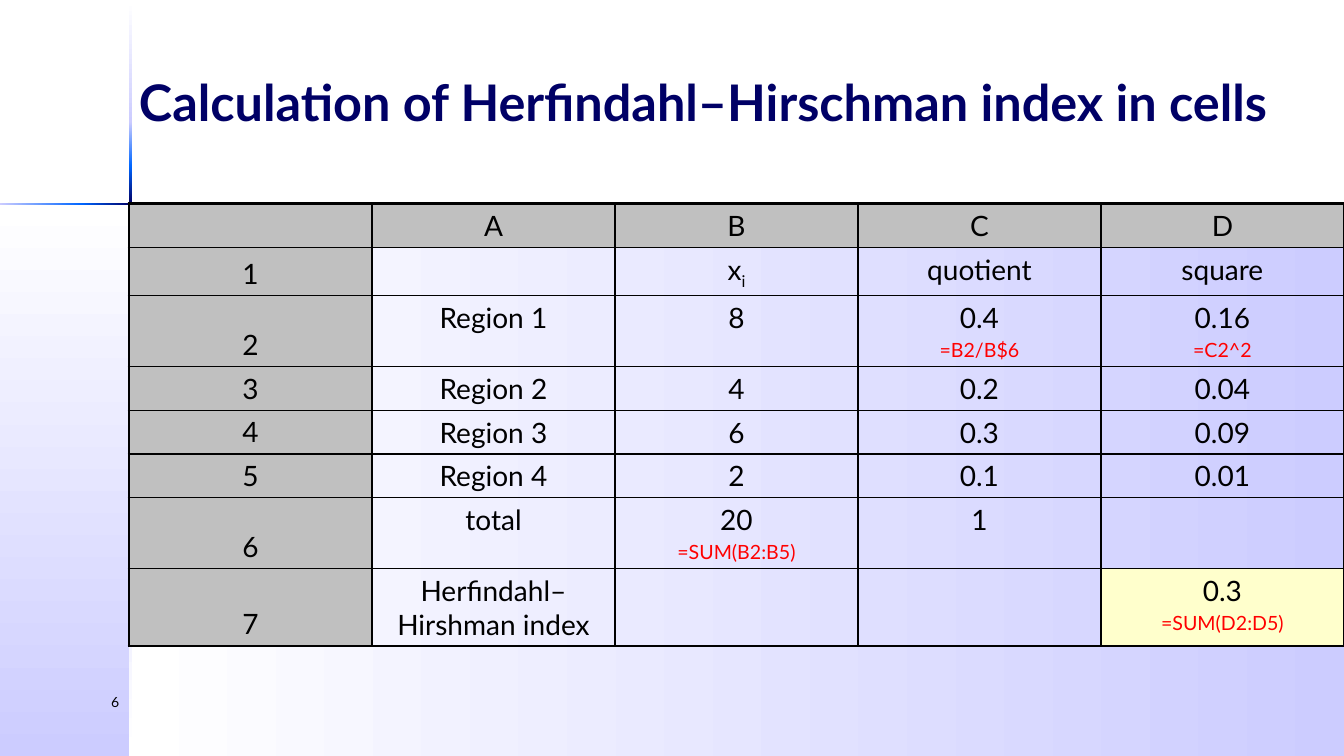
import copy

import pptx
import pptx.dml.color
import pptx.enum.shapes
import pptx.enum.text
import pptx.oxml
import pptx.oxml.ns
import pptx.util

Inches = pptx.util.Inches
Pt = pptx.util.Pt
ALIGN = pptx.enum.text.PP_ALIGN
ANCHOR = pptx.enum.text.MSO_ANCHOR


class Theme:
    font = "Lato"
    black, navy, blue = "000000", "000066", "0066FF"
    lavender, white = "CCCCFF", "FFFFFF"
    header_grey, result_yellow, formula_red = "C0C0C0", "FFFFCC", "FF0000"
    title_size, cell_size, formula_size, number_size = 36, 20, 14, 10
    outer_border, inner_border = 2.25, 1


def style_paragraph(paragraph, size, color, align, bold=False):
    paragraph.alignment = align
    for run in paragraph.runs:
        run.font.name = Theme.font
        run.font.size = Pt(size)
        run.font.bold = bold
        run.font.color.rgb = pptx.dml.color.RGBColor.from_string(color)


def add_gradient_bar(left, top, width, height, colors, vertical):
    bar = slide.shapes.add_shape(
        pptx.enum.shapes.MSO_SHAPE.RECTANGLE,
        Inches(left), Inches(top), Inches(width), Inches(height))
    bar.shadow.inherit = False
    bar.line.fill.background()
    bar.fill.gradient()
    bar.fill.gradient_angle = 270 if vertical else 0
    stop_list = bar._element.spPr.find(".//" + pptx.oxml.ns.qn("a:gsLst"))
    while len(stop_list) < len(colors):
        stop_list.append(copy.deepcopy(stop_list[0]))
    for index, (stop, color) in enumerate(zip(bar.fill.gradient_stops, colors)):
        stop.position = index / (len(colors) - 1)
        stop.color.rgb = pptx.dml.color.RGBColor.from_string(color)


presentation = pptx.Presentation()
presentation.slide_width = Inches(13.33)
presentation.slide_height = Inches(7.5)
slide = presentation.slides.add_slide(presentation.slide_layouts[6])

# Shaded panels below the horizontal rule
panel_fade = (Theme.white, Theme.lavender)
add_gradient_bar(1.29, 2.02, 12.04, 5.48, panel_fade, vertical=False)
add_gradient_bar(0, 2.02, 1.29, 5.48, panel_fade, vertical=True)

# Crossing rules, each a chain of fading segments between the listed edges
segment_colors = [
    (Theme.white, Theme.lavender),
    (Theme.lavender, Theme.blue),
    (Theme.blue, Theme.navy, Theme.blue),
    (Theme.blue, Theme.lavender),
    (Theme.lavender, Theme.white),
]
vertical_edges = [0.01, 1.21, 1.65, 2.38, 2.82, 7.5]
horizontal_edges = [0, 0.81, 1.78, 2.36, 13.33]
for start, end, colors in zip(vertical_edges, vertical_edges[1:], segment_colors):
    add_gradient_bar(1.28, start, 0.03, end - start, colors, vertical=True)
for start, end, colors in zip(horizontal_edges, horizontal_edges[1:], segment_colors[1:]):
    add_gradient_bar(start, 2.01, end - start, 0.02, colors, vertical=False)

# Slide number
page_number = slide.shapes.add_textbox(Inches(0), Inches(6.83), Inches(1.28), Inches(0.5))
page_number.text_frame.word_wrap = True
page_number.text_frame.text = "6"
style_paragraph(page_number.text_frame.paragraphs[0], Theme.number_size, Theme.black, ALIGN.RIGHT)

# Title
title = slide.shapes.add_textbox(Inches(1.28), Inches(0), Inches(12.05), Inches(2.02))
title.text_frame.word_wrap = True
title.text_frame.vertical_anchor = ANCHOR.MIDDLE
title.text_frame.text = "Calculation of Herfindahl–Hirschman index in cells"
style_paragraph(title.text_frame.paragraphs[0], Theme.title_size, Theme.navy, ALIGN.LEFT, bold=True)

# Spreadsheet table: a line starting with "=" is a formula
sheet_rows = [
    ["", "A", "B", "C", "D"],
    ["1", "", "x", "quotient", "square"],
    ["2", "Region 1", "8", "0.4\n=B2/B$6", "0.16\n=C2^2"],
    ["3", "Region 2", "4", "0.2", "0.04"],
    ["4", "Region 3", "6", "0.3", "0.09"],
    ["5", "Region 4", "2", "0.1", "0.01"],
    ["6", "total", "20\n=SUM(B2:B5)", "1", ""],
    ["7", "Herfindahl–Hirshman index", "", "", "0.3\n=SUM(D2:D5)"],
]
row_heights = [0.43, 0.48, 0.7, 0.43, 0.43, 0.43, 0.7, 0.77]
last_row, last_column = len(sheet_rows) - 1, len(sheet_rows[0]) - 1
sheet = slide.shapes.add_table(
    last_row + 1, last_column + 1,
    Inches(1.28), Inches(2.02), Inches(12.05), Inches(sum(row_heights))).table
sheet.first_row = sheet.horz_banding = False
for column in sheet.columns:
    column.width = Inches(2.41)

for r, (row_texts, height) in enumerate(zip(sheet_rows, row_heights)):
    sheet.rows[r].height = Inches(height)
    for c, text in enumerate(row_texts):
        cell = sheet.cell(r, c)
        cell.text_frame.text = text
        if text == "x":
            subscript = cell.text_frame.paragraphs[0].add_run()
            subscript.text = "i"
            subscript.font._element.set("baseline", "-25000")
        for paragraph in cell.text_frame.paragraphs:
            if paragraph.text.startswith("="):
                style_paragraph(paragraph, Theme.formula_size, Theme.formula_red, ALIGN.CENTER)
                paragraph.space_before = Pt(2.5)
            else:
                style_paragraph(paragraph, Theme.cell_size, Theme.black, ALIGN.CENTER)
        cell.vertical_anchor = ANCHOR.BOTTOM if c == 0 else ANCHOR.TOP

        # Borders: heavy around the table, thin inside
        outer_sides = {"L": c == 0, "R": c == last_column, "T": r == 0, "B": r == last_row}
        for side, is_outer in outer_sides.items():
            weight = Pt(Theme.outer_border if is_outer else Theme.inner_border)
            cell._tc.get_or_add_tcPr().append(pptx.oxml.parse_xml(
                f'<a:ln{side} {pptx.oxml.ns.nsdecls("a")} w="{weight}"><a:solidFill>'
                f'<a:srgbClr val="{Theme.black}"/></a:solidFill></a:ln{side}>'))

        # Fill: grey headings, yellow result, clear elsewhere
        if r == 0 or c == 0:
            fill_color = Theme.header_grey
        elif (r, c) == (last_row, last_column):
            fill_color = Theme.result_yellow
        else:
            cell.fill.background()
            continue
        cell.fill.solid()
        cell.fill.fore_color.rgb = pptx.dml.color.RGBColor.from_string(fill_color)

presentation.save("out.pptx")
